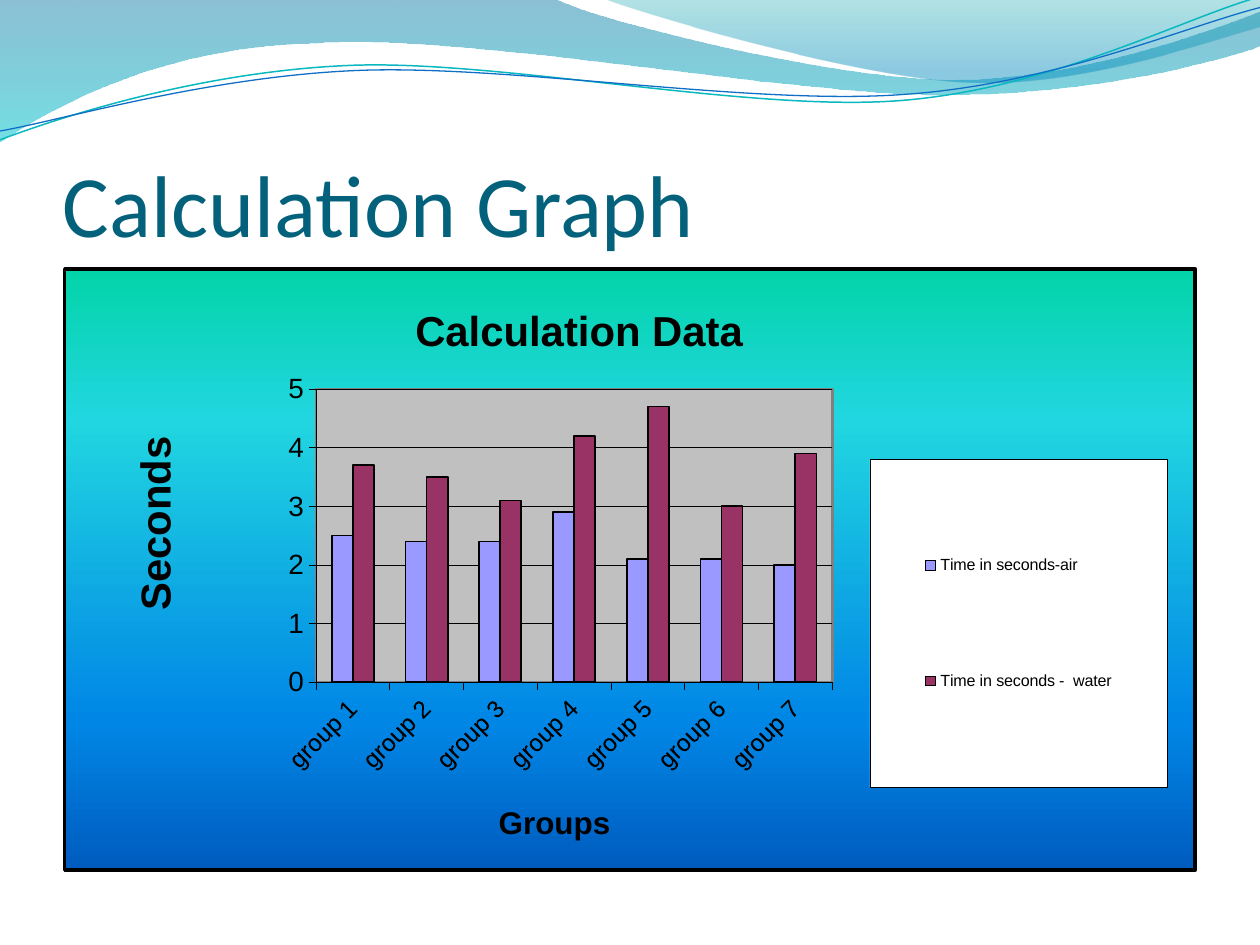
import pptx
import pptx.chart.data
import pptx.dml.color
import pptx.enum.chart
import pptx.enum.text
import pptx.oxml
import pptx.oxml.ns
import pptx.util

Inches, Pt = pptx.util.Inches, pptx.util.Pt
enum = pptx.enum.chart
qn = pptx.oxml.ns.qn
WIDE, HIGH = 9, 4.8  # chart size in inches


def rgb(code):
    return pptx.dml.color.RGBColor.from_string(code)


def put(item, **vals):
    for name, val in vals.items():
        setattr(item, name, val)


def node(xml):
    """Parse a snippet that uses the a: and c: prefixes."""
    head, tail = xml.split(">", 1)
    names = pptx.oxml.ns.nsdecls("a", "c")
    return pptx.oxml.parse_xml(f"{head} {names}>{tail}")


def grad(stops):
    """Top-to-bottom gradient; each stop is position, colour, opacity in %."""
    marks = "".join(
        f'<a:gs pos="{pos * 1000}"><a:srgbClr val="{code}">'
        f'<a:alpha val="{alpha * 1000}"/></a:srgbClr></a:gs>'
        for pos, code, alpha in stops)
    return (f'<a:gradFill><a:gsLst>{marks}</a:gsLst>'
            '<a:lin ang="5400000" scaled="0"/></a:gradFill>')


def solid(code):
    return f'<a:solidFill><a:srgbClr val="{code}"/></a:solidFill>'


def area(fill, code, width):
    """Shape properties of a chart part: fill and outline."""
    return node(f'<c:spPr>{fill}<a:ln w="{Pt(width)}">{solid(code)}</a:ln></c:spPr>')


def place(part, prev, **spots):
    """Fix a chart part's place, in inches within the chart, after child prev."""
    for old in part.findall(qn("c:layout")):
        part.remove(old)
    modes = "".join(f'<c:{key}Mode val="edge"/>' for key in "xy")
    inner = '<c:layoutTarget val="inner"/>' if prev is None else ""
    vals = "".join(f'<c:{key} val="{val / (WIDE if key in "xw" else HIGH)}"/>'
                   for key, val in spots.items())
    box = node(f"<c:layout><c:manualLayout>{inner}{modes}{vals}"
               "</c:manualLayout></c:layout>")
    if prev is None:
        part.insert(0, box)
    else:
        part.find(qn(prev)).addnext(box)


class Deck:
    font = "Arial"
    ink = "000000"

    def __init__(self):
        self.file = pptx.Presentation()
        put(self.file, slide_width=Inches(10), slide_height=Inches(7.5))
        self.slide = self.file.slides.add_slide(self.file.slide_layouts[6])

    def style(self, font, size, bold=False, name=None, color=None):
        put(font, size=Pt(size), bold=bold, name=name or self.font)
        font.color.rgb = rgb(color or self.ink)

    def curve(self, start, steps, close):
        """Outline of lines (x, y) and cubic curves (two handles and an end)."""
        pts = [(Inches(x), Inches(y)) for step in steps
               for x, y in zip(step[::2], step[1::2])]
        pen = self.slide.shapes.build_freeform(*map(Inches, start))
        pen.add_line_segments(pts, close=close)
        shape = pen.convert_to_shape()
        shape.shadow.inherit = False
        shape.fill.background()
        legs = iter(list(shape.element.iter(qn("a:lnTo"))))
        for step in steps:
            leg = next(legs)
            if len(step) == 6:
                bend = node("<a:cubicBezTo></a:cubicBezTo>")
                leg.addprevious(bend)
                for part in (leg, next(legs), next(legs)):
                    bend.append(part[0])
                    part.getparent().remove(part)
        return shape

    def wave(self, start, steps, stops):
        shape = self.curve(start, steps, True)
        shape.line.fill.background()
        blank = shape.element.spPr.find(qn("a:noFill"))
        blank.getparent().replace(blank, node(grad(stops)))

    def stroke(self, start, steps, color, width):
        line = self.curve(start, steps, False).line
        line.color.rgb = rgb(color)
        line.width = Pt(width)

    def text(self, words, box, size, name, color):
        frame = self.slide.shapes.add_textbox(*map(Inches, box)).text_frame
        put(frame, word_wrap=True, vertical_anchor=pptx.enum.text.MSO_ANCHOR.BOTTOM,
            margin_left=0, margin_right=0, margin_top=Inches(0.05), margin_bottom=0)
        run = frame.paragraphs[0].add_run()
        run.text = words
        self.style(run.font, size, name=name, color=color)

    def label(self, title, words, size, x, y):
        """Bold title of the chart or of an axis."""
        run = title.text_frame.paragraphs[0].add_run()
        run.text = words
        self.style(run.font, size, bold=True)
        place(title._element, "c:tx", x=x, y=y)

    def edge(self, line, width=0.25):
        line.color.rgb = rgb(self.ink)
        line.width = Pt(width)

    def axis(self, axis, size):
        put(axis, major_tick_mark=enum.XL_TICK_MARK.OUTSIDE,
            minor_tick_mark=enum.XL_TICK_MARK.NONE)
        self.style(axis.tick_labels.font, size)
        self.edge(axis.format.line)

    def chart(self, box, groups, rows, colors):
        data = pptx.chart.data.CategoryChartData()
        data.categories = groups
        for name, vals in rows.items():
            data.add_series(name, vals)
        chart = self.slide.shapes.add_chart(
            enum.XL_CHART_TYPE.COLUMN_CLUSTERED, *map(Inches, box), data).chart
        self.style(chart.font, 10)
        plot = chart.plots[0]
        put(plot, gap_width=150, overlap=0, vary_by_categories=False)
        for bars, color in zip(plot.series, colors):
            bars.format.fill.solid()
            bars.format.fill.fore_color.rgb = rgb(color)
            self.edge(bars.format.line, 1)
        return chart


def main():
    deck = Deck()
    deck.wave((0, 0), [
        (4.4, -0.01), (4.76, 0.17, 6.64, 0.63, 7.58, 0.63),
        (8.53, 0.63, 9.58, 0.26, 10, 0.09), (10.01, 0.36),
        (9.83, 0.44, 8.7, 0.76, 7.46, 0.75), (6.22, 0.75, 3.82, 0.28, 2.57, 0.34),
        (1.29, 0.36, 0.46, 0.83, -0.01, 1.13)],
        [(0, "0074A1", 45), (100, "00C6CF", 55)])
    deck.wave((4.79, -0.01), [
        (5.09, 0.11, 6.82, 0.62, 7.69, 0.65), (8.56, 0.69, 9.61, 0.32, 10, 0.21),
        (10, 0)], [(0, "00A1A9", 30), (80, "008BBF", 45)])
    deck.stroke((0, 1.11), [
        (0.48, 0.93, 1.58, 0.57, 2.77, 0.52), (3.95, 0.47, 5.93, 0.89, 7.13, 0.8),
        (8.33, 0.71, 9.38, 0.15, 9.98, -0.02)], "0AB8BF", 0.85)
    deck.stroke((0, 1.04), [
        (0.47, 0.96, 1.64, 0.61, 2.83, 0.56), (4.03, 0.51, 5.97, 0.84, 7.17, 0.75),
        (8.36, 0.67, 9.41, 0.21, 10, 0.06)], "0F6FC6", 0.75)
    deck.text("Calculation Graph", (0.5, 0.77, 9, 1.25), 50, "Calibri", "04617B")

    chart = deck.chart(
        (0.5, 2.12, WIDE, HIGH), [f"group {num}" for num in range(1, 8)],
        {"Time in seconds-air": (2.5, 2.4, 2.4, 2.9, 2.1, 2.1, 2),
         "Time in seconds -  water": (3.7, 3.5, 3.1, 4.2, 4.7, 3, 3.9)},
        ("9999FF", "993366"))
    cat, val = chart.category_axis, chart.value_axis
    deck.axis(cat, 14)
    deck.axis(val, 16)
    put(val, minimum_scale=0, maximum_scale=5, major_unit=1)
    deck.edge(val.major_gridlines.format.line)
    cat._element.find(qn("c:txPr")).find(qn("a:bodyPr")).set("rot", "-2700000")

    deck.label(chart.chart_title, "Calculation Data", 24, 2.73, 0.22)
    deck.label(cat.axis_title, "Groups", 18, 3.41, 4.21)
    deck.label(val.axis_title, "Seconds", 24, 0.44, 1.28)
    turn = val.axis_title.text_frame._txBody.find(qn("a:bodyPr"))
    turn.set("rot", "-5400000")
    turn.set("vert", "horz")

    chart.has_legend = True
    key = chart.legend
    put(key, position=enum.XL_LEGEND_POSITION.RIGHT, include_in_layout=False)
    deck.style(key.font, 9.2)
    place(key._element, "c:legendPos", x=6.41, y=1.52, w=2.37, h=2.62)
    key._element.find(qn("c:txPr")).addprevious(area(solid("FFFFFF"), deck.ink, 0.25))

    body = chart._chartSpace.find(qn("c:chart"))
    field = body.find(qn("c:plotArea"))
    place(field, None, x=2, y=0.96, w=4.11, h=2.34)
    field.append(area(solid("C0C0C0"), "808080", 1.5))
    body.addnext(area(grad([(0, "03D4A8", 100), (25, "21D6E0", 100),
                            (75, "0087E6", 100), (100, "005CBF", 100)]), deck.ink, 2))
    deck.file.save("out.pptx")


if __name__ == "__main__":
    main()
